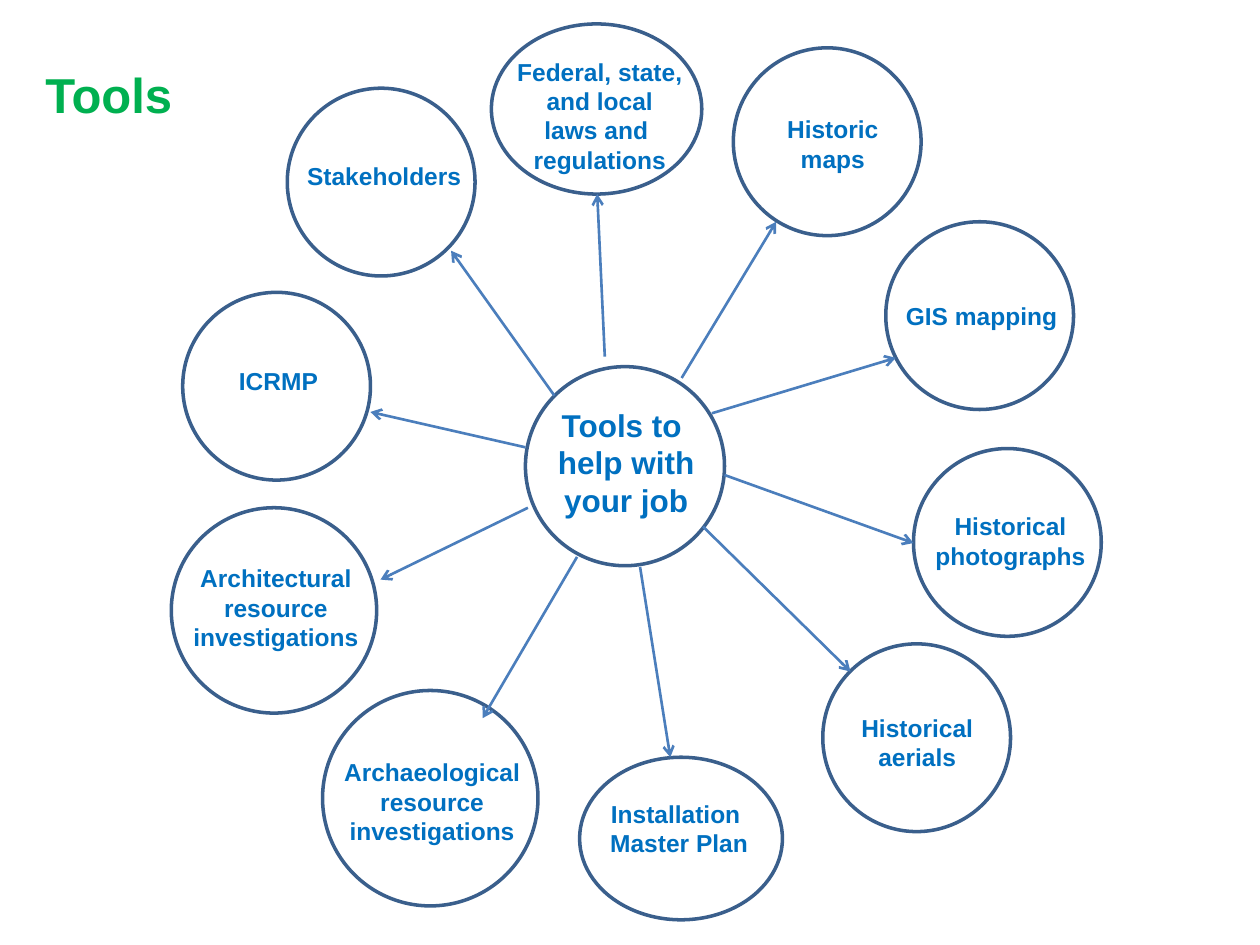
import pptx
import pptx.dml.color
import pptx.enum.shapes
import pptx.enum.text
import pptx.oxml
import pptx.oxml.ns
import pptx.util
from lxml import etree

PX = 9144
FONT = "Arial"
LABEL_WIDTH = 174
COLORS = {
    "paper": "FFFFFF",
    "outline": "3A5F8C",
    "arrow": "4B7EBC",
    "label": "0070C0",
    "title": "00B050",
}
HUB = ((417, 291, 158, 158), (410, 317, 101), ["Tools to ", "help with your job"])
TOOLS = [
    ((725, 356, 149, 149), (715, 401, 57), ["Historical", "photographs"]),
    ((653, 511, 149, 149), (641, 561, 57), ["Historical", "aerials"]),
    ((703, 176, 149, 149), (692, 234, 34), ["GIS mapping"]),
    ((582, 38, 149, 149), (574, 86, 57), ["Historic", "maps"]),
    ((390, 19, 167, 135), (389, 40, 104),
     ["Federal, state, and local", "laws and ", "regulations"]),
    ((228, 70, 149, 149), (218, 123, 34), ["Stakeholders"]),
    ((145, 232, 149, 149), (134, 286, 34), ["ICRMP"]),
    ((136, 403, 163, 163), (132, 442, 81), ["Architectural resource investigations"]),
    ((256, 548, 171, 171), (256, 596, 81), ["Archaeological resource investigations"]),
    ((460, 601, 161, 129), (452, 629, 57), ["Installation ", "Master Plan"]),
]
SPOKES = [
    ((558, 418), (675, 533)),
    ((575, 377), (725, 431)),
    ((565, 328), (711, 284)),
    ((541, 300), (616, 176)),
    ((480, 283), (474, 154)),
    ((440, 314), (358, 199)),
    ((417, 355), (294, 327)),
    ((419, 403), (302, 460)),
    ((458, 442), (383, 570)),
    ((508, 450), (532, 601)),
]


def px(*lengths):
    """Turn px lengths into EMU."""
    return [pptx.util.Emu(length * PX) for length in lengths]


def rgb(name):
    """Look up a palette colour."""
    return pptx.dml.color.RGBColor.from_string(COLORS[name])


def write(frame, paragraphs, *, size, color, align, bold=True):
    """Fill a text frame with formatted paragraphs."""
    frame.word_wrap = True
    for index, text in enumerate(paragraphs):
        paragraph = frame.add_paragraph() if index else frame.paragraphs[0]
        paragraph.alignment = align
        run = paragraph.add_run()
        run.text = text
        run.font.name = FONT
        run.font.size = pptx.util.Pt(size)
        run.font.bold = bold
        run.font.color.rgb = rgb(color)


def add_title(slide, text):
    """Place and format the slide title."""
    title = slide.shapes.title
    title.left, title.top, title.width, title.height = px(26, 29, 262, 74)
    title.text_frame.vertical_anchor = pptx.enum.text.MSO_ANCHOR.BOTTOM
    write(title.text_frame, [text], size=28, color="title",
          align=pptx.enum.text.PP_ALIGN.LEFT)


def add_bubble(slide, bounds, label_place, paragraphs, size=14):
    """Draw an outlined ellipse with its label."""
    bubble = slide.shapes.add_shape(
        pptx.enum.shapes.MSO_SHAPE.OVAL, *px(*bounds))
    bubble.shadow.inherit = False
    bubble.fill.solid()
    bubble.fill.fore_color.rgb = rgb("paper")
    bubble.line.color.rgb = rgb("outline")
    bubble.line.width = pptx.util.Pt(2)
    left, top, height = label_place
    label = slide.shapes.add_textbox(*px(left, top, LABEL_WIDTH, height))
    write(label.text_frame, paragraphs, size=size, color="label",
          align=pptx.enum.text.PP_ALIGN.CENTER)
    label.text_frame.auto_size = pptx.enum.text.MSO_AUTO_SIZE.SHAPE_TO_FIT_TEXT


def add_spoke(slide, start, end):
    """Draw an arrow from the hub to a tool."""
    spoke = slide.shapes.add_connector(
        pptx.enum.shapes.MSO_CONNECTOR.STRAIGHT, *px(*start, *end))
    spoke.line.color.rgb = rgb("arrow")
    spoke.line.width = pptx.util.Pt(1.5)
    etree.SubElement(spoke.line._get_or_add_ln(),
                     pptx.oxml.ns.qn("a:tailEnd"), type="arrow")
    etree.SubElement(spoke._element.spPr, pptx.oxml.ns.qn("a:effectLst"))


def main():
    """Build the slide and save it."""
    deck = pptx.Presentation()
    deck.slide_width, deck.slide_height = px(1000, 750)
    slide = deck.slides.add_slide(deck.slide_layouts.get_by_name("Title Only"))
    add_title(slide, "Tools")
    add_bubble(slide, *HUB, size=18)
    for tool in TOOLS:
        add_bubble(slide, *tool)
    for start, end in SPOKES:
        add_spoke(slide, start, end)
    deck.save("out.pptx")


if __name__ == "__main__":
    main()
